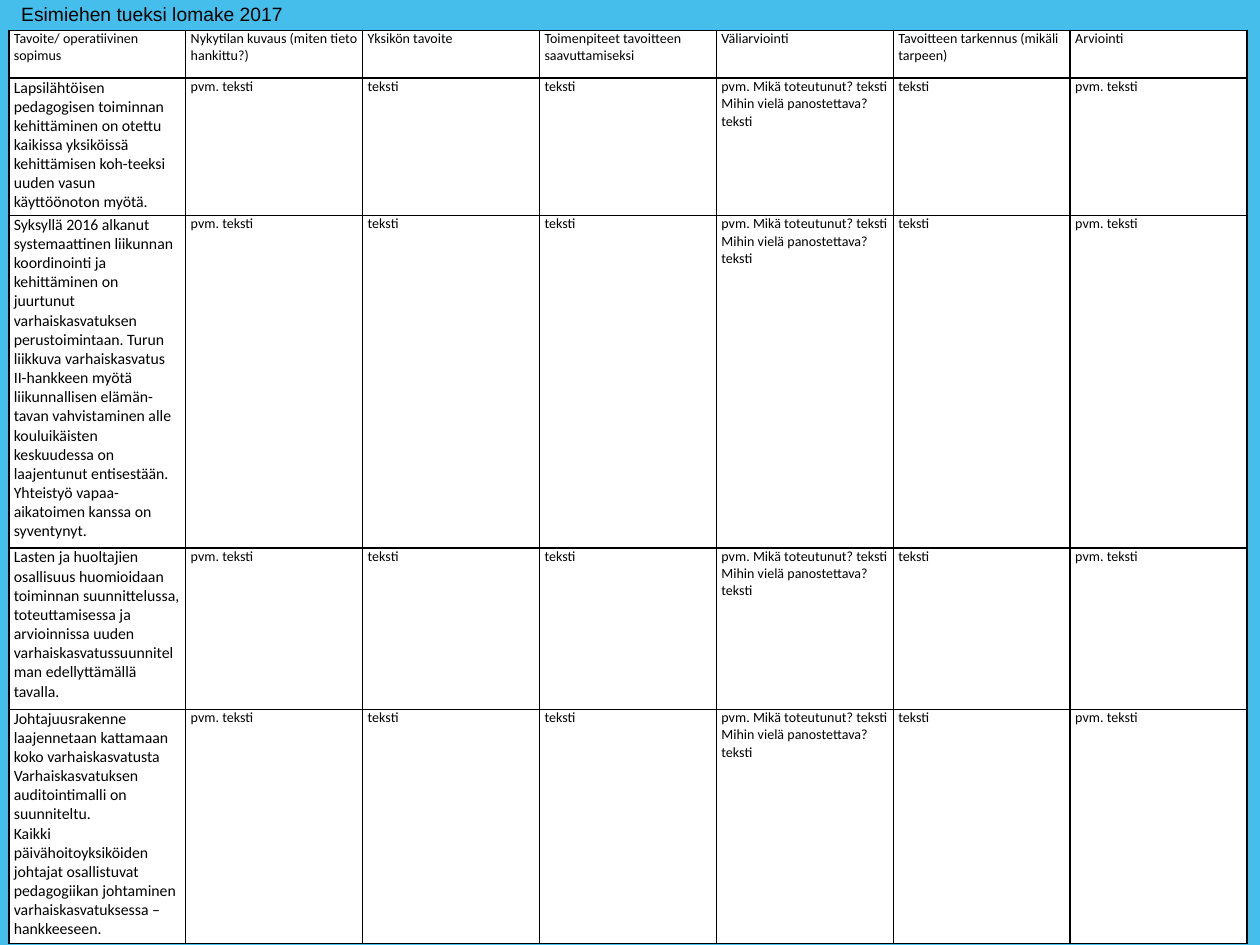
from lxml.etree import SubElement
from pptx import Presentation
from pptx.dml.color import RGBColor
from pptx.enum.text import MSO_ANCHOR
from pptx.oxml.ns import qn
from pptx.util import Inches, Pt


def color(value):
    return RGBColor.from_string(value)


def add_borders(cell):
    properties = cell._tc.get_or_add_tcPr()
    for position, side in enumerate(("lnL", "lnR", "lnT", "lnB")):
        line = SubElement(properties, qn("a:" + side), w=str(Pt(1)))
        fill = SubElement(line, qn("a:solidFill"))
        SubElement(fill, qn("a:srgbClr"), val=BLACK)
        properties.insert(position, line)  # borders come before the fill


BLACK, WHITE, SKY = "000000", "FFFFFF", "46BEEB"
LEFT, TABLE_TOP, TABLE_WIDTH = 0.07, 0.24, 9.83
ROW_HEIGHTS = [0.38, 1.09, 2.64, 1.28, 1.86]

HEADERS = [
    "Tavoite/ operatiivinen sopimus",
    "Nykytilan kuvaus (miten tieto hankittu?)",
    "Yksikön tavoite",
    "Toimenpiteet tavoitteen saavuttamiseksi",
    "Väliarviointi",
    "Tavoitteen tarkennus (mikäli tarpeen)",
    "Arviointi",
]
GOALS = [
    "Lapsilähtöisen pedagogisen toiminnan kehittäminen on otettu kaikissa "
    "yksiköissä kehittämisen koh-teeksi uuden vasun käyttöönoton myötä.",
    "Syksyllä 2016 alkanut systemaattinen liikunnan koordinointi ja "
    "kehittäminen on juurtunut varhaiskasvatuksen perustoimintaan. Turun "
    "liikkuva varhaiskasvatus II-hankkeen myötä liikunnallisen elämän-tavan "
    "vahvistaminen alle kouluikäisten keskuudessa on laajentunut entisestään. "
    "Yhteistyö vapaa-aikatoimen kanssa on syventynyt.",
    "Lasten ja huoltajien osallisuus huomioidaan toiminnan suunnittelussa, "
    "toteuttamisessa ja arvioinnissa uuden varhaiskasvatussuunnitelman "
    "edellyttämällä tavalla.",
    "Johtajuusrakenne laajennetaan kattamaan koko varhaiskasvatusta\n"
    "Varhaiskasvatuksen auditointimalli on suunniteltu.\n"
    "Kaikki päivähoitoyksiköiden johtajat osallistuvat pedagogiikan "
    "johtaminen varhaiskasvatuksessa – hankkeeseen.",
]
DATED, FREE = "pvm. teksti", "teksti"
REVIEW = "pvm. Mikä toteutunut? teksti\nMihin vielä panostettava? teksti"
FORM_FIELDS = [DATED, FREE, FREE, REVIEW, FREE, DATED]
rows = [HEADERS] + [[goal] + FORM_FIELDS for goal in GOALS]

# Slide and background
presentation = Presentation()
presentation.slide_width, presentation.slide_height = Inches(10), Inches(7.5)
slide = presentation.slides.add_slide(presentation.slide_layouts[6])
slide.background.fill.solid()
slide.background.fill.fore_color.rgb = color(SKY)

# Form table
table = slide.shapes.add_table(
    len(rows), len(HEADERS), Inches(LEFT), Inches(TABLE_TOP),
    Inches(TABLE_WIDTH), Inches(sum(ROW_HEIGHTS))).table
table.first_row = table.horz_banding = False
for column in table.columns:
    column.width = Inches(TABLE_WIDTH / len(HEADERS))
for row, height in zip(table.rows, ROW_HEIGHTS):
    row.height = Inches(height)

for row_index, texts in enumerate(rows):
    for column_index, text in enumerate(texts):
        cell = table.cell(row_index, column_index)
        cell.margin_left = cell.margin_right = Inches(0.04)
        cell.margin_top = cell.margin_bottom = 0
        cell.fill.solid()
        cell.fill.fore_color.rgb = color(WHITE)
        add_borders(cell)
        cell.text = text
        is_goal = row_index > 0 and column_index == 0
        for paragraph in cell.text_frame.paragraphs:
            paragraph.font.name = "Calibri"
            paragraph.font.size = Pt(9 if is_goal else 8)
            paragraph.font.color.rgb = color(BLACK)

# Title
title = slide.shapes.add_textbox(
    Inches(LEFT), Inches(-0.03), Inches(2.3), Inches(0.69))
title.text_frame.word_wrap = False
title.text_frame.vertical_anchor = MSO_ANCHOR.TOP
paragraph = title.text_frame.paragraphs[0]
paragraph.text = "Esimiehen tueksi lomake 2017"
paragraph.font.name = "Arial"
paragraph.font.size = Pt(11)
paragraph.font.color.rgb = color(BLACK)

presentation.save("out.pptx")
